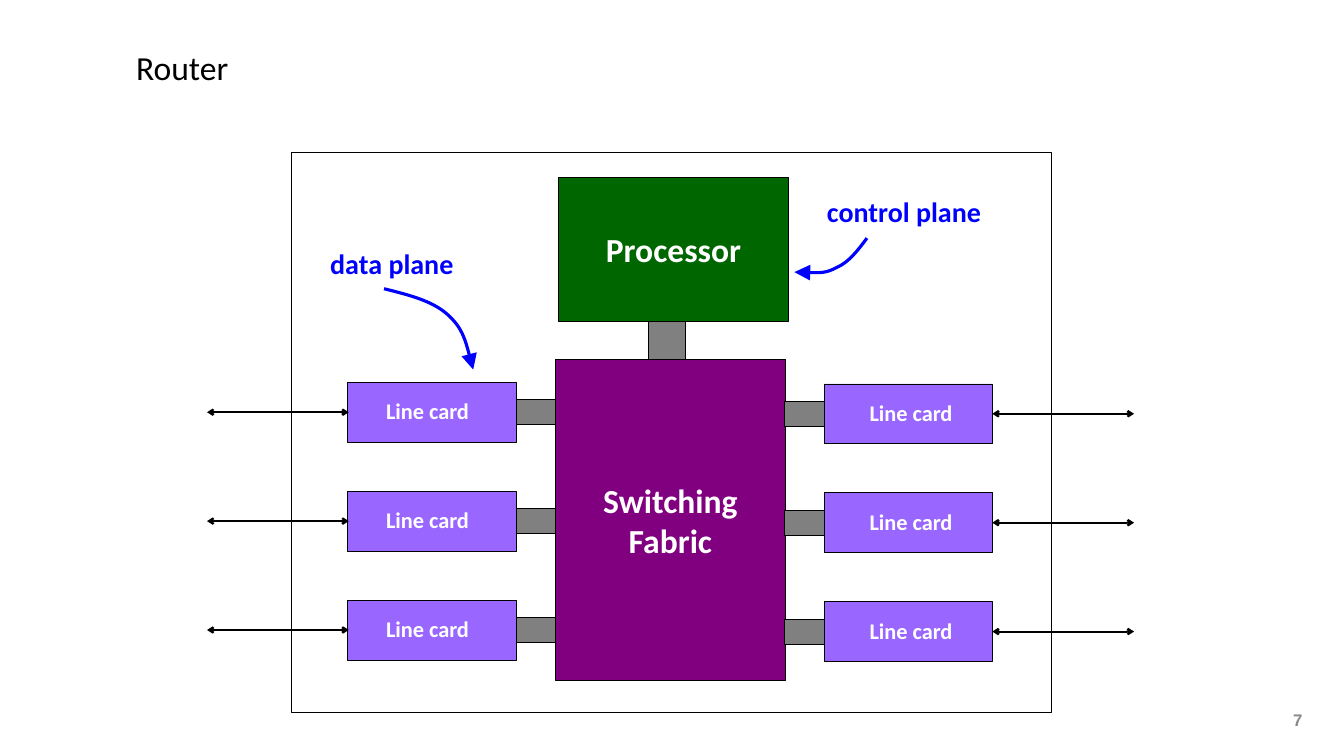
from dataclasses import dataclass

from lxml import etree
from pptx import Presentation
from pptx.dml.color import RGBColor
from pptx.enum import shapes, text
from pptx.oxml import ns
from pptx.util import Pt


@dataclass(frozen=True)
class Theme:
    font: str = "Calibri"
    number_font: str = "Arial"
    black: str = "000000"
    white: str = "FFFFFF"
    grey: str = "898989"
    link: str = "808080"
    card: str = "9966FF"
    fabric: str = "800080"
    processor: str = "006600"
    note: str = "0000FF"
    heading: float = 32
    note_size: float = 26.7
    card_size: float = 21.3
    number_size: float = 16
    thin: float = 0.75
    port: float = 2
    pointer: float = 3


T = Theme()


def set_text(tf, words, size, color, font=T.font, bold=True,
             align=text.PP_ALIGN.CENTER):
    tf.text = words
    for p in tf.paragraphs:
        p.alignment = align
        for r in p.runs:
            r.font.name, r.font.size, r.font.bold = font, Pt(size), bold
            r.font.color.rgb = RGBColor.from_string(color)


def set_line(line, color, width):
    line.color.rgb = RGBColor.from_string(color)
    line.width = Pt(width)


def add_arrowhead(sp, end, kind, size="med"):
    """Put a head on one end of a line; end is headEnd or tailEnd."""
    etree.SubElement(sp.get_or_add_ln() if hasattr(sp, "get_or_add_ln")
                     else sp.line._get_or_add_ln(),
                     ns.qn(f"a:{end}"), type=kind, w=size, len=size)


def add_box(s, box, fill=None, words=""):
    sp = s.shapes.add_shape(shapes.MSO_SHAPE.RECTANGLE, *map(Pt, box))
    sp.shadow.inherit = False
    if fill:
        sp.fill.solid()
        sp.fill.fore_color.rgb = RGBColor.from_string(fill)
    else:
        sp.fill.background()
    set_line(sp.line, T.black, T.thin)
    if words:
        sp.text_frame.word_wrap = False
        sp.text_frame.vertical_anchor = text.MSO_ANCHOR.MIDDLE
        set_text(sp.text_frame, words, T.heading, T.white)


def add_label(s, box, words, size, color, font=T.font, inset=None):
    tf = s.shapes.add_textbox(*map(Pt, box)).text_frame
    tf.word_wrap = False
    if inset is not None:
        tf.margin_left = tf.margin_right = Pt(inset)
        tf.margin_top = tf.margin_bottom = Pt(inset)
    set_text(tf, words, size, color, font)


def add_port(s, start, end, y):
    line = s.shapes.add_connector(shapes.MSO_CONNECTOR.STRAIGHT,
                                  Pt(start), Pt(y), Pt(end), Pt(y))
    set_line(line.line, T.black, T.port)
    for tip in ("headEnd", "tailEnd"):
        add_arrowhead(line, tip, "arrow")
    etree.SubElement(line.element.spPr, ns.qn("a:effectLst"))


def add_curve(s, points):
    """Draw a start point followed by groups of three Bezier points."""
    points = [(Pt(x), Pt(y)) for x, y in points]
    builder = s.shapes.build_freeform(*points[0])
    builder.add_line_segments(points[1:], close=False)
    sp = builder.convert_to_shape()
    sp.shadow.inherit = False
    sp.fill.background()
    set_line(sp.line, T.note, T.pointer)
    add_arrowhead(sp, "tailEnd", "triangle", "lg")
    steps = list(sp.element.iter(ns.qn("a:lnTo")))
    for i in range(0, len(steps), 3):
        curve = etree.SubElement(steps[i].getparent(), ns.qn("a:cubicBezTo"))
        for step in steps[i:i + 3]:
            curve.append(step[0])
            step.getparent().remove(step)


def add_title(s, box, words):
    title = s.shapes.title
    title.left, title.top, title.width, title.height = map(Pt, box)
    tf = title.text_frame
    tf.margin_left = tf.margin_right = Pt(4.3)
    tf.margin_top = tf.margin_bottom = Pt(4.3)
    tf.vertical_anchor = text.MSO_ANCHOR.MIDDLE
    set_text(tf, words, T.heading, T.black, bold=False,
             align=text.PP_ALIGN.LEFT)


def add_core(s, box):
    """Processor above the switching fabric, joined by a link."""
    x, y, w, h = box
    add_box(s, (x, y + 172.8, w, h - 172.8), T.fabric, "Switching\nFabric")
    add_box(s, (x + 2.9, y, w, 136.8), T.processor, "Processor")
    add_box(s, (x + 88.6, y + 136.8, 34.6, 36), T.link)


def add_line_cards(s, box, link_x, label_x, port, rows=3):
    """A column of cards, each with a link inwards and a port outwards."""
    x, y, w, h = box
    card_h, link_w, link_h = 57, 37.4, 23.8
    label_w, label_h = 95, 33
    pitch = (h - card_h) / (rows - 1)
    for row in range(rows):
        top = y + row * pitch
        middle = top + card_h / 2
        add_box(s, (x, top, w, card_h), T.card)
        add_box(s, (link_x, middle - link_h / 2, link_w, link_h), T.link)
        add_label(s, (label_x, middle - label_h / 2 - 1, label_w, label_h),
                  "Line card", T.card_size, T.white)
        add_port(s, *port, middle)


def add_router(s, box):
    x, y, w, h = box
    add_core(s, (x + 252, y + 23.8, 218.9, 478.8))
    add_line_cards(s, (x + 53.8, y + 218.7, 160.6, 264.4), x + 214.4,
                   x + 82.5, (x + 55, x - 80))
    add_line_cards(s, (x + 507.8, y + 220.2, 160.6, 264.4), x + 470.2,
                   x + 543, (x + 668, x + 803))
    add_box(s, box)
    add_curve(s, [(x + 88.6, y + 129.6), (x + 111.6, y + 135.4),
                  (x + 134.6, y + 141.1), (x + 149, y + 154.1),
                  (x + 163.4, y + 167), (x + 168.5, y + 186.5),
                  (x + 173.5, y + 206.6)])
    add_label(s, (x + 29.5, y + 85.7, 133.2, 39.6), "data plane",
              T.note_size, T.note)
    add_curve(s, [(x + 548.6, y + 81.4), (x + 540, y + 92.9),
                  (x + 531.4, y + 104.4), (x + 519.8, y + 109.4),
                  (x + 509, y + 115.2), (x + 494.6, y + 114.5),
                  (x + 479.5, y + 113.8)])
    add_label(s, (x + 502.6, y + 36, 162.7, 39.6), "control plane",
              T.note_size, T.note)


def main():
    prs = Presentation()
    prs.slide_width, prs.slide_height = Pt(1280.16), Pt(720)
    s = prs.slides.add_slide(prs.slide_layouts[5])
    add_title(s, (125.3, 0, 1030.3, 128.2), "Router")
    add_label(s, (1219.7, 676.1, 33.1, 36), "7", T.number_size, T.grey,
              T.number_font, inset=0)
    add_router(s, (277.2, 145.4, 724.3, 532.8))
    prs.save("out.pptx")


if __name__ == "__main__":
    main()
